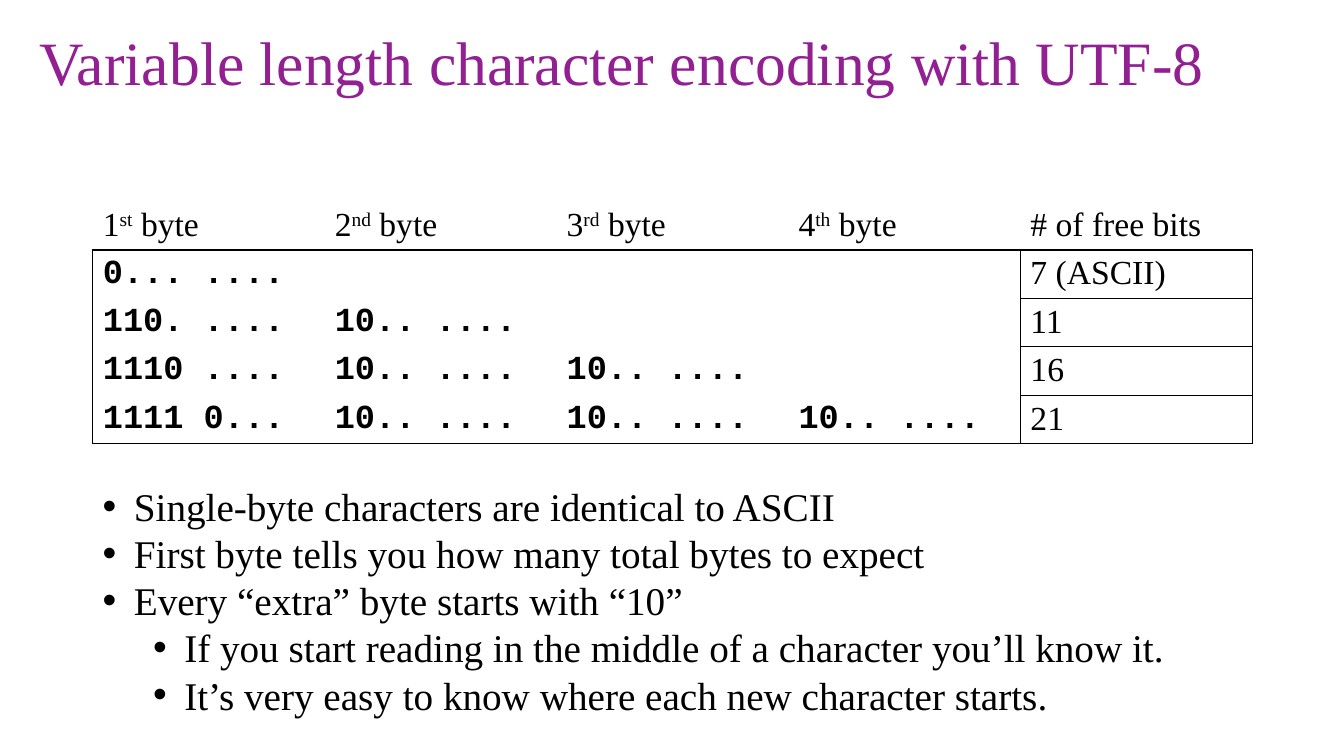
from dataclasses import dataclass

from lxml.etree import SubElement
from pptx import Presentation
from pptx.dml.color import RGBColor
from pptx.enum.text import MSO_ANCHOR as Anchor, MSO_AUTO_SIZE as Fit, PP_ALIGN as Align
from pptx.oxml.ns import qn
from pptx.slide import Slide
from pptx.table import _Cell as Cell
from pptx.text.text import Font
from pptx.util import Inches, Pt


@dataclass(frozen=True)
class Theme:
    serif: str = "Times New Roman"
    mono: str = "Courier New"
    purple: str = "932092"
    black: str = "000000"
    head: int = 44
    body: int = 28
    cell: int = 24
    line: float = 1
    pitch: float = 33.6


@dataclass(frozen=True)
class Point:
    text: str
    level: int = 0


@dataclass(frozen=True)
class Code:
    """Bit patterns of one encoding length, and its free bits."""
    first: str
    extra: int
    free: str


THEME = Theme()
TITLE = "Variable length character encoding with UTF-8"
ORDER = ("st", "nd", "rd", "th")
LAST = len(ORDER)
CODES = (
    Code("0... ....", 0, "7 (ASCII)"),
    Code("110. ....", 1, "11"),
    Code("1110 ....", 2, "16"),
    Code("1111 0...", 3, "21"),
)
EXTRA = "10.. ...."
POINTS = (
    Point("Single-byte characters are identical to ASCII"),
    Point("First byte tells you how many total bytes to expect"),
    Point("Every “extra” byte starts with “10”"),
    Point("If you start reading in the middle of a character you’ll know it.", 1),
    Point("It’s very easy to know where each new character starts.", 1),
)


def style(font: Font, size: int, color: str = THEME.black,
          name: str = THEME.serif, bold: bool = False) -> None:
    font.name, font.size, font.bold = name, Pt(size), bold
    font.color.rgb = RGBColor.from_string(color)


def add_title(slide: Slide) -> None:
    title = slide.shapes.title
    title.left, title.top = Inches(0.29), Inches(0.17)
    title.width, title.height = Inches(12.73), Inches(0.97)
    frame = title.text_frame
    frame.text = TITLE
    frame.auto_size = Fit.NONE
    frame.vertical_anchor = Anchor.MIDDLE
    para = frame.paragraphs[0]
    para.alignment, para.line_spacing = Align.LEFT, 0.9
    style(para.font, THEME.head, THEME.purple)


def rule(cell: Cell, row: int, col: int) -> None:
    """Box the byte block as a whole and each free-bits cell alone."""
    below, free = row > 0, col == LAST
    sides = {
        "L": below and col in (0, LAST),
        "R": below and col in (LAST - 1, LAST),
        "T": row == 1 or (below and free),
        "B": row in (0, len(CODES)) or free,
    }
    props = cell._tc.get_or_add_tcPr()
    for side, drawn in sides.items():
        line = SubElement(props, qn(f"a:ln{side}"), w=str(Pt(THEME.line)))
        if drawn:
            fill = SubElement(line, qn("a:solidFill"))
            SubElement(fill, qn("a:srgbClr"), val=THEME.black)
        else:
            SubElement(line, qn("a:noFill"))
    cell.fill.background()


def add_table(slide: Slide) -> None:
    rows, cols = len(CODES) + 1, LAST + 1
    table = slide.shapes.add_table(rows, cols, Inches(0.92), Inches(2),
                                   Inches(2.3 * cols), Inches(0.48 * rows)).table
    table.first_row = table.horz_banding = False
    heads = [f"{n}" for n in range(1, cols)] + ["# of free bits"]
    grid = [heads]
    for code in CODES:
        blank = [""] * (LAST - 1 - code.extra)
        grid.append([code.first] + [EXTRA] * code.extra + blank + [code.free])
    for row, texts in enumerate(grid):
        for col, text in enumerate(texts):
            cell = table.cell(row, col)
            rule(cell, row, col)
            para = cell.text_frame.paragraphs[0]
            code = row > 0 and col < LAST
            style(para.font, THEME.cell, name=THEME.mono if code else THEME.serif,
                  bold=code)
            if text:
                para.add_run().text = text
            if row == 0 and col < LAST:
                mark = para.add_run()
                mark.text = ORDER[col]
                mark._r.get_or_add_rPr().set("baseline", "30000")
                para.add_run().text = " byte"


def add_points(slide: Slide) -> None:
    box = slide.shapes.add_textbox(Inches(0.92), Inches(4.74),
                                   Inches(11.34), Inches(2.46))
    frame = box.text_frame
    frame.word_wrap = True
    for i, point in enumerate(POINTS):
        para = frame.add_paragraph() if i else frame.paragraphs[0]
        para.text, para.level = point.text, point.level
        props = para._p.get_or_add_pPr()
        props.set("marL", str(Inches(0.31 + 0.5 * point.level)))
        props.set("indent", str(Inches(-0.31)))
        SubElement(props, qn("a:buFont"), typeface="Arial")
        SubElement(props, qn("a:buChar"), char="•")
        para.line_spacing = Pt(THEME.pitch)
        style(para.font, THEME.body)


def main() -> None:
    deck = Presentation()
    deck.slide_width, deck.slide_height = Inches(13.33), Inches(7.5)
    slide = deck.slides.add_slide(deck.slide_layouts[5])
    add_title(slide)
    add_table(slide)
    add_points(slide)
    deck.save("out.pptx")


if __name__ == "__main__":
    main()
